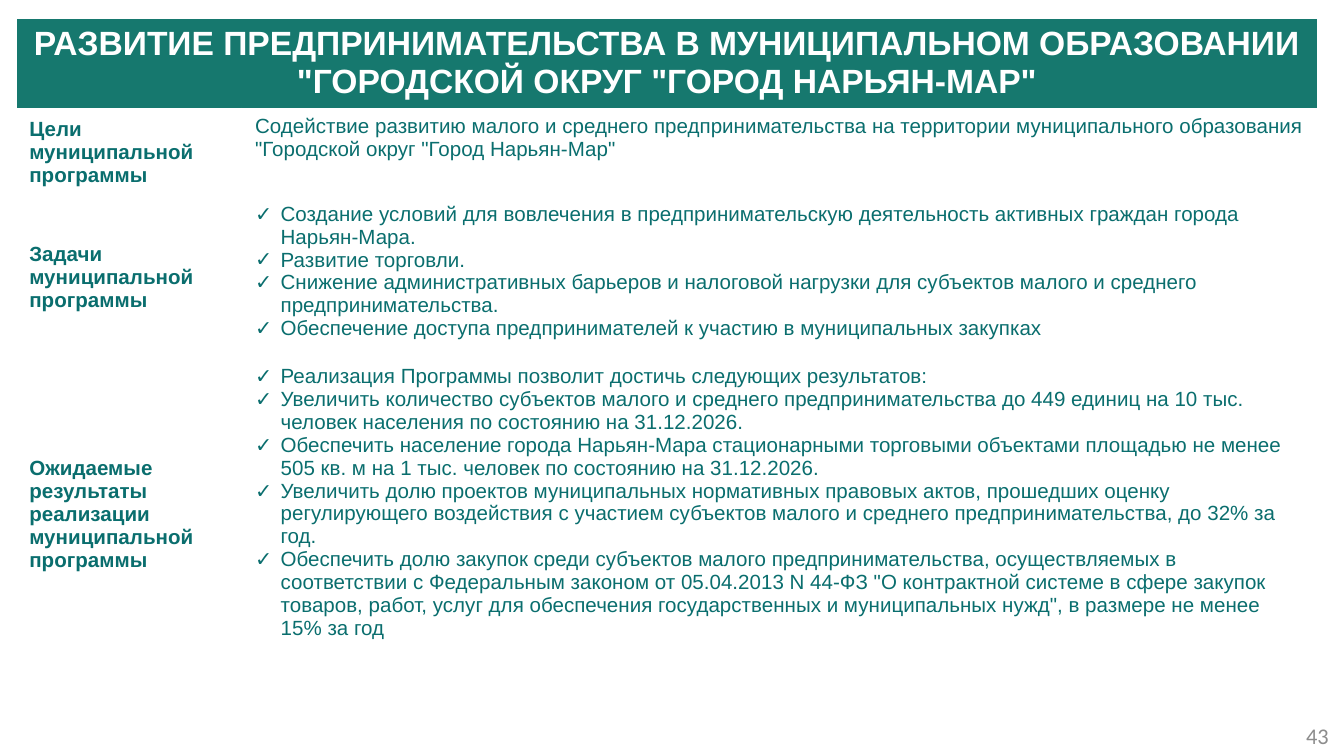
from lxml.etree import SubElement
from pptx import Presentation
from pptx.dml.color import RGBColor
from pptx.enum.text import MSO_ANCHOR, PP_ALIGN
from pptx.oxml import parse_xml
from pptx.oxml.ns import nsdecls, qn
from pptx.util import Inches, Pt

WIDE = 10
HIGH = WIDE * 9 / 16
COLS = (168, 801)
ROWS = (66, 65, 121, 232)
HUES = {"band": "16786E", "text": "0A6E6E", "white": "FFFFFF", "page": "8C8C8C"}

TITLE = ('РАЗВИТИЕ ПРЕДПРИНИМАТЕЛЬСТВА В МУНИЦИПАЛЬНОМ ОБРАЗОВАНИИ '
         '"ГОРОДСКОЙ ОКРУГ "ГОРОД НАРЬЯН-МАР"')
# Each entry: label, paragraphs, whether they carry check marks
PARTS = [
    ("Цели муниципальной программы", [
        'Содействие развитию малого и среднего предпринимательства на территории '
        'муниципального образования "Городской округ "Город Нарьян-Мар"',
    ], False),
    ("Задачи муниципальной программы", [
        "Создание условий для вовлечения в предпринимательскую деятельность "
        "активных граждан города Нарьян-Мара.",
        "Развитие торговли.",
        "Снижение административных барьеров и налоговой нагрузки для субъектов "
        "малого и среднего предпринимательства.",
        "Обеспечение доступа предпринимателей к участию в муниципальных закупках",
    ], True),
    ("Ожидаемые результаты реализации муниципальной программы", [
        "Реализация Программы позволит достичь следующих результатов:",
        "Увеличить количество субъектов малого и среднего предпринимательства "
        "до 449 единиц на 10 тыс. человек населения по состоянию на 31.12.2026.",
        "Обеспечить население города Нарьян-Мара стационарными торговыми объектами "
        "площадью не менее 505 кв. м на 1 тыс. человек по состоянию на 31.12.2026.",
        "Увеличить долю проектов муниципальных нормативных правовых актов, прошедших "
        "оценку регулирующего воздействия с участием субъектов малого и среднего "
        "предпринимательства, до 32% за год.",
        "Обеспечить долю закупок среди субъектов малого предпринимательства, "
        "осуществляемых в соответствии с Федеральным законом от 05.04.2013 N 44-ФЗ "
        '"О контрактной системе в сфере закупок товаров, работ, услуг для обеспечения '
        'государственных и муниципальных нужд", в размере не менее 15% за год',
    ], True),
]


def area(left, top, width, height):
    """Turn percentages of the slide into a box of lengths."""
    return [Inches(share * full / 100) for share, full in
            zip((left, top, width, height), (WIDE, HIGH) * 2)]


def write(frame, *lines, size=11, font="Arial", hue="text", bold=False,
          align=PP_ALIGN.LEFT, check=False):
    frame.word_wrap = True
    for i, line in enumerate(lines):
        para = frame.add_paragraph() if i else frame.paragraphs[0]
        para.alignment = align
        if check:
            props = para._p.get_or_add_pPr()
            props.set("marL", str(Inches(0.19)))
            props.set("indent", str(-Inches(0.19)))
            SubElement(props, qn("a:buFont")).set("typeface", "Arial")
            SubElement(props, qn("a:buChar")).set("char", "✓")
        run = para.add_run()
        run.text = line
        run.font.size, run.font.name, run.font.bold = Pt(size), font, bold
        run.font.color.rgb = RGBColor.from_string(HUES[hue])


def edge(cell, hue):
    """Draw the left, right and top borders of a cell."""
    props = cell._tc.get_or_add_tcPr()
    for i, side in enumerate("LRT"):
        props.insert(i, parse_xml(
            f'<a:ln{side} {nsdecls("a")} w="12700"><a:solidFill>'
            f'<a:srgbClr val="{HUES[hue]}"/></a:solidFill></a:ln{side}>'))


def add_plan(slide, box):
    """Place the programme table: title band, then label and text rows."""
    width, height = box[2:]
    table = slide.shapes.add_table(len(ROWS), len(COLS), *box).table
    table.first_row = table.horz_banding = False
    for col, part in zip(table.columns, COLS):
        col.width = int(width * part / sum(COLS))
    for row, part in zip(table.rows, ROWS):
        row.height = int(height * part / sum(ROWS))
    for cell in table.iter_cells():
        cell.fill.background()

    head = table.cell(0, 0)
    head.merge(table.cell(0, 1))
    head.margin_bottom = Inches(0.02)
    head.fill.solid()
    head.fill.fore_color.rgb = RGBColor.from_string(HUES["band"])
    edge(head, "white")
    write(head.text_frame, TITLE, size=18, hue="white", bold=True,
          align=PP_ALIGN.CENTER)

    for i, (label, lines, check) in enumerate(PARTS, 1):
        name = table.cell(i, 0)
        name.vertical_anchor = MSO_ANCHOR.MIDDLE
        write(name.text_frame, label, bold=True)
        write(table.cell(i, 1).text_frame, *lines, check=check)


def add_page(slide, box):
    """Place the page number."""
    frame = slide.shapes.add_textbox(*box).text_frame
    frame.vertical_anchor = MSO_ANCHOR.MIDDLE
    write(frame, "43", size=12, font="Calibri", hue="page",
          align=PP_ALIGN.RIGHT)


def main():
    deck = Presentation()
    deck.slide_width, deck.slide_height = Inches(WIDE), Inches(HIGH)
    slide = deck.slides.add_slide(deck.slide_layouts[6])
    add_page(slide, area(76.5, 94.7, 23.35, 5.3))
    add_plan(slide, area(1.18, 2.45, 96.9, 86))
    deck.save("out.pptx")


if __name__ == "__main__":
    main()
